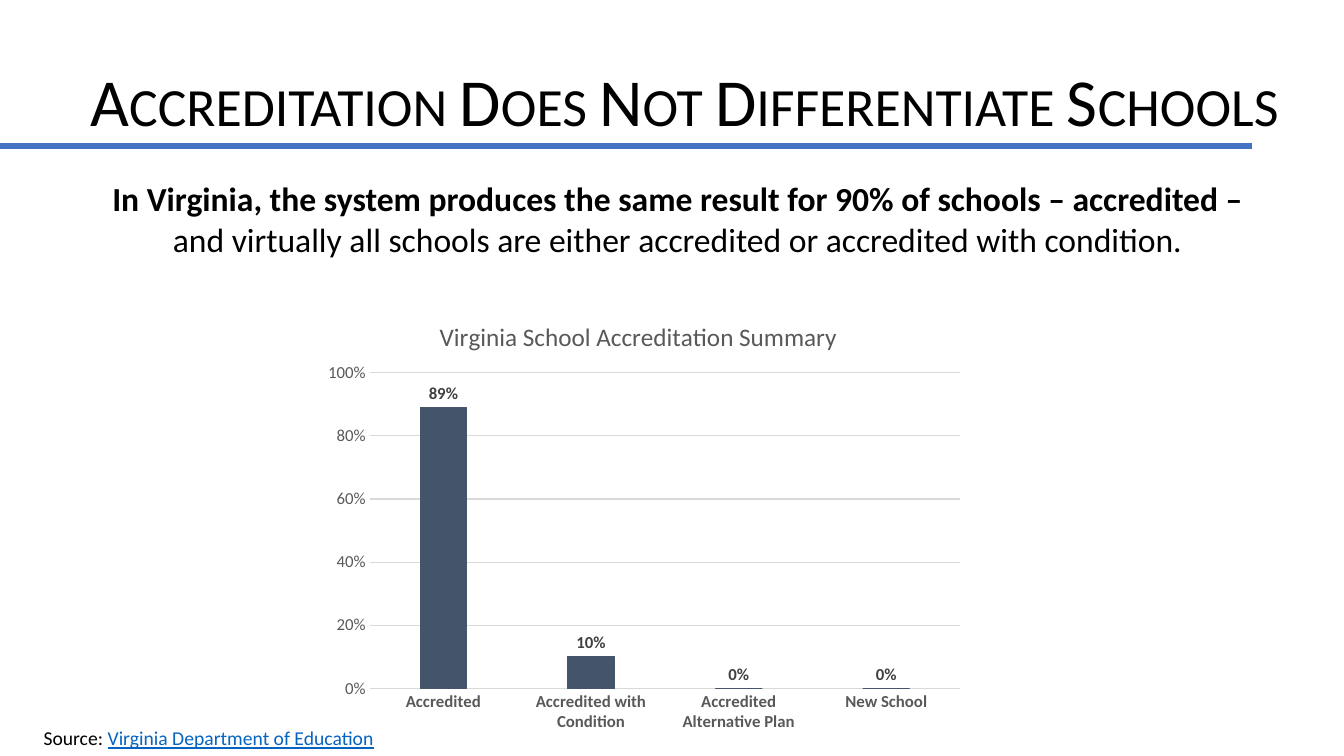
from lxml import etree
from pptx import Presentation
from pptx import util as u
from pptx.chart import data as chart_data
from pptx.dml.color import RGBColor
from pptx.enum import chart as c, shapes, text
from pptx.oxml import ns

PX = 9525
FONT = "Calibri"
BLACK = RGBColor(0x00, 0x00, 0x00)
BLUE = RGBColor(0x44, 0x72, 0xC4)
SLATE = RGBColor(0x44, 0x54, 0x6A)
LINK_BLUE = RGBColor(0x05, 0x63, 0xC1)
GRAY = RGBColor(0x59, 0x59, 0x59)
DARK_GRAY = RGBColor(0x40, 0x40, 0x40)
LIGHT_GRAY = RGBColor(0xD9, 0xD9, 0xD9)

RESULTS = {
    "Accredited": 0.89,
    "Accredited with Condition": 0.10,
    "Accredited Alternative Plan": 0,
    "New School": 0,
}


def px(*lengths):
    return [u.Emu(length * PX) for length in lengths]


def format_font(font, size, color, **values):
    font.color.rgb = color
    for name, value in {"name": FONT, "size": u.Pt(size), **values}.items():
        setattr(font, name, value)


def format_line(line, color, width):
    line.color.rgb = color
    line.width = u.Pt(width)


def add_title(slide, box, words):
    title = slide.shapes.title
    title.left, title.top, title.width, title.height = px(*box)
    frame = title.text_frame
    margins = dict(zip(("margin_left", "margin_top", "margin_right", "margin_bottom"),
                       px(86, 5, 10, 5)))
    settings = {"vertical_anchor": text.MSO_ANCHOR.BOTTOM,
                "auto_size": text.MSO_AUTO_SIZE.NONE, "word_wrap": True, **margins}
    for name, value in settings.items():
        setattr(frame, name, value)
    paragraph = frame.paragraphs[0]
    paragraph.alignment = text.PP_ALIGN.LEFT
    paragraph.line_spacing = 0.9
    run = paragraph.add_run()
    run.text = words
    format_font(run.font, 48, BLACK)
    run.font._element.set("cap", "small")


def add_rule(slide, left, right, y):
    rule = slide.shapes.add_connector(shapes.MSO_CONNECTOR.STRAIGHT, *px(left, y, right, y))
    format_line(rule.line, BLUE, 4.5)
    etree.SubElement(rule._element.spPr, ns.qn("a:effectLst"))


def add_text(slide, box, size, runs, alignment=text.PP_ALIGN.LEFT, indent=0):
    """Add one paragraph of (words, colour, font values) runs."""
    frame = slide.shapes.add_textbox(*px(*box)).text_frame
    frame.word_wrap = True
    paragraph = frame.paragraphs[0]
    paragraph.alignment = alignment
    paragraph._p.get_or_add_pPr().set("marL", str(indent * PX))
    for words, color, values in runs:
        run = paragraph.add_run()
        run.text = words
        format_font(run.font, size, color, **values)


def place_in_chart(element, index, **values):
    """Give a chart part a manual layout, in fractions of the chart."""
    for old in element.findall(ns.qn("c:layout")):
        element.remove(old)
    layout = etree.Element(ns.qn("c:layout"))
    manual = etree.SubElement(layout, ns.qn("c:manualLayout"))
    for name, value in values.items():
        etree.SubElement(manual, ns.qn(f"c:{name}")).set("val", str(value))
    element.insert(index, layout)


def add_results_chart(slide, box):
    data = chart_data.CategoryChartData(number_format="0%")
    data.categories = list(RESULTS)
    data.add_series("Series 1", list(RESULTS.values()))
    chart = slide.shapes.add_chart(
        c.XL_CHART_TYPE.COLUMN_CLUSTERED, *px(*box), data).chart
    format_font(chart.font, 10, BLACK)
    chart.has_legend = False

    chart.has_title = True
    title = chart.chart_title
    title.include_in_layout = False
    run = title.text_frame.paragraphs[0].add_run()
    run.text = "Virginia School Accreditation Summary"
    format_font(run.font, 18, GRAY, bold=False)
    place_in_chart(title._element, 1, xMode="edge", yMode="edge", x=0.18, y=0.05)
    place_in_chart(chart._chartSpace.chart.plotArea, 0, layoutTarget="inner",
                   xMode="edge", yMode="edge", x=0.08, y=0.18, w=0.9, h=0.7)

    for axis, bold in ((chart.category_axis, True), (chart.value_axis, False)):
        axis.major_tick_mark = axis.minor_tick_mark = c.XL_TICK_MARK.NONE
        format_font(axis.tick_labels.font, 12, GRAY, bold=bold)
    format_line(chart.category_axis.format.line, LIGHT_GRAY, 0.75)
    percent = chart.value_axis
    for name, value in {"minimum_scale": 0, "maximum_scale": 1, "major_unit": 0.2}.items():
        setattr(percent, name, value)
    percent.format.line.fill.background()
    format_line(percent.major_gridlines.format.line, LIGHT_GRAY, 0.75)
    percent.tick_labels.number_format = "0%"
    percent.tick_labels.number_format_is_linked = False

    plot = chart.plots[0]
    plot.gap_width, plot.overlap, plot.vary_by_categories = 219, -27, False
    series = plot.series[0]
    series.format.fill.solid()
    series.format.fill.fore_color.rgb = SLATE
    format_line(series.format.line, SLATE, 0.75)
    labels = series.data_labels
    settings = {"show_value": True, "number_format": "0%", "number_format_is_linked": False,
                "position": c.XL_LABEL_POSITION.OUTSIDE_END}
    for name, value in settings.items():
        setattr(labels, name, value)
    format_font(labels.font, 12, DARK_GRAY, bold=True)


def add_accreditation_slide(presentation):
    slide = presentation.slides.add_slide(presentation.slide_layouts.get_by_name("Title Only"))
    add_title(slide, (0, 0, 1280, 139), "Accreditation Does Not Differentiate Schools")
    add_rule(slide, 0, 1192, 139)
    add_results_chart(slide, (302, 278, 625, 429))
    add_text(slide, (59, 165, 1161, 87), 24, [
        ("In Virginia, the system produces the same result for 90% of schools – accredited – ",
         BLACK, {"bold": True}),
        ("and virtually all schools are either accredited or accredited with condition.",
         BLACK, {"bold": False}),
    ], text.PP_ALIGN.CENTER, indent=12)
    add_text(slide, (32, 687, 1066, 33), 14, [
        ("Source: ", BLACK, {}),
        ("Virginia Department of Education", LINK_BLUE, {"underline": True}),
    ])


def main():
    presentation = Presentation()
    presentation.slide_width, presentation.slide_height = px(1280, 720)
    add_accreditation_slide(presentation)
    presentation.save("out.pptx")


if __name__ == "__main__":
    main()
